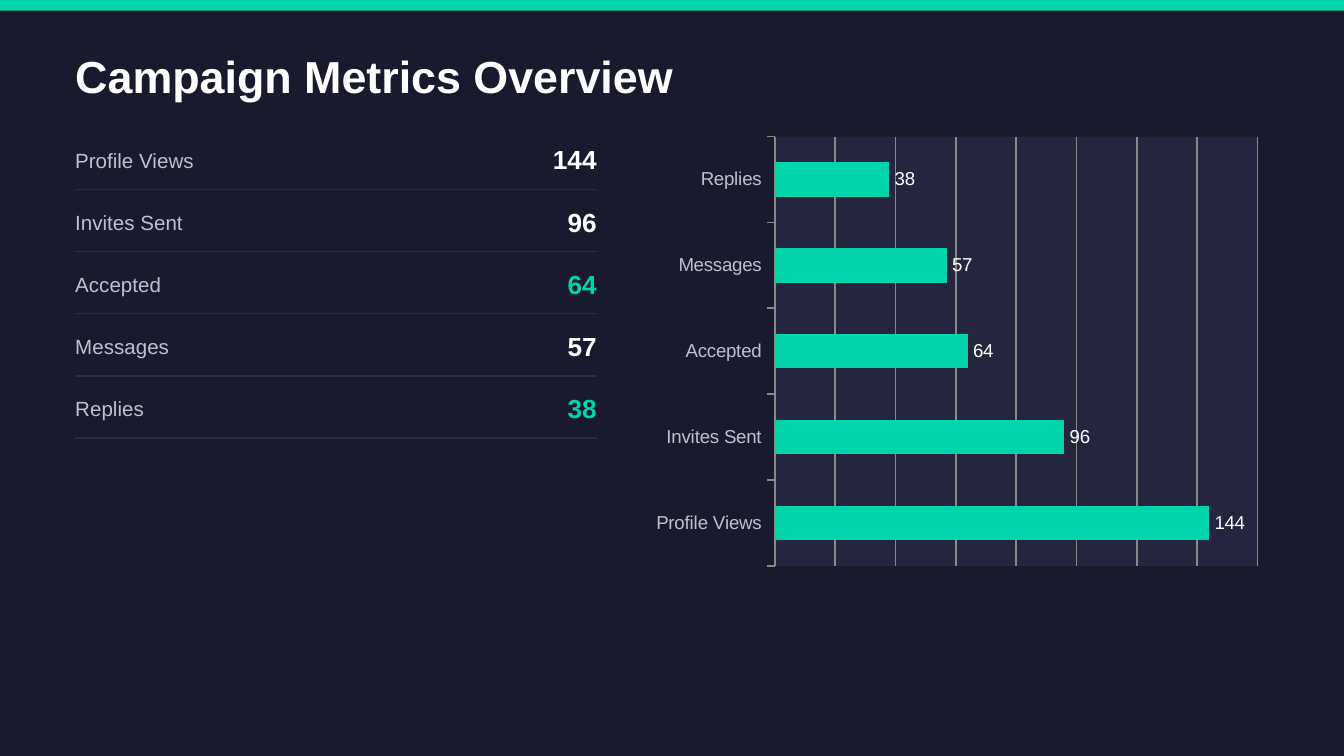
from lxml import etree
from pptx import Presentation
from pptx.chart.data import CategoryChartData
from pptx.dml.color import RGBColor
from pptx.enum import chart as ch, shapes, text
from pptx.oxml import parse_xml
from pptx.oxml.ns import nsdecls, qn
from pptx.util import Inches, Pt

TEAL, WHITE, GREY = "00D4AA", "FFFFFF", "C0C0D0"
LEFT, RIGHT = 0.56, 4.44
FIRST_DIVIDER, LAST_DIVIDER = 1.41, 3.26


def color(hex_value):
    return RGBColor.from_string(hex_value)


def write(shape, words, size, hex_value, bold=False, align=text.PP_ALIGN.LEFT):
    frame = shape.text_frame
    frame.text = words
    frame.margin_left = frame.margin_right = frame.margin_top = frame.margin_bottom = 0
    frame.auto_size = text.MSO_AUTO_SIZE.NONE
    frame.vertical_anchor = text.MSO_ANCHOR.TOP
    frame.word_wrap = True
    paragraph = frame.paragraphs[0]
    paragraph.alignment = align
    font = paragraph.runs[0].font
    font.name, font.size, font.bold = "Arial", Pt(size), bold
    font.color.rgb = color(hex_value)


# 16:9 slide
prs = Presentation()
prs.slide_width = Inches(10)
prs.slide_height = prs.slide_width * 9 // 16
slide = prs.slides.add_slide(prs.slide_layouts[5])
slide.background.fill.solid()
slide.background.fill.fore_color.rgb = color("1A1A2E")

# Top accent bar
accent = slide.shapes.add_shape(
    shapes.MSO_SHAPE.RECTANGLE, 0, 0, prs.slide_width, Inches(0.08))
accent.shadow.inherit = False
accent.fill.solid()
accent.fill.fore_color.rgb = color(TEAL)
accent.line.fill.background()

# Title
title = slide.shapes.title
title.left, title.top = Inches(LEFT), Inches(0.36)
title.width, title.height = Inches(9.07), Inches(0.39)
write(title, "Campaign Metrics Overview", 24, WHITE, bold=True)

# Metric rows: divider, label, value
metrics = [
    ("Profile Views", 144, WHITE, 0.9, 0.33),
    ("Invites Sent", 96, WHITE, 0.81, 0.22),
    ("Accepted", 64, TEAL, 0.65, 0.22),
    ("Messages", 57, WHITE, 0.71, 0.22),
    ("Replies", 38, TEAL, 0.52, 0.22),
]
row_pitch = (LAST_DIVIDER - FIRST_DIVIDER) / (len(metrics) - 1)
for row, (metric, count, count_color, label_width, value_width) in enumerate(metrics):
    divider_y = FIRST_DIVIDER + row * row_pitch
    divider = slide.shapes.add_connector(
        shapes.MSO_CONNECTOR.STRAIGHT,
        Inches(LEFT), Inches(divider_y), Inches(RIGHT), Inches(divider_y))
    divider.line.color.rgb = color("2A2A4E")
    divider.line.width = Pt(0.75)
    etree.SubElement(divider._element.spPr, qn("a:effectLst"))

    label = slide.shapes.add_textbox(
        Inches(LEFT), Inches(divider_y - 0.31), Inches(label_width), Inches(0.17))
    write(label, metric, 11, GREY)
    label.text_frame.word_wrap = False
    value = slide.shapes.add_textbox(
        Inches(RIGHT - value_width), Inches(divider_y - 0.34),
        Inches(value_width), Inches(0.23))
    write(value, str(count), 14, count_color, bold=True, align=text.PP_ALIGN.RIGHT)
    value.text_frame.word_wrap = False

# Bar chart of the same metrics
data = CategoryChartData()
data.categories = [metric[0] for metric in metrics]
data.add_series("Series 1", [metric[1] for metric in metrics])
chart = slide.shapes.add_chart(
    ch.XL_CHART_TYPE.BAR_CLUSTERED,
    Inches(4.79), Inches(0.95), Inches(4.66), Inches(3.33), data).chart
chart.has_legend = False
chart.has_title = False
chart.font.name, chart.font.size = "Calibri", Pt(10)
chart.font.color.rgb = color("000000")

bars = chart.plots[0]
bars.gap_width = 150
bars.vary_by_categories = False
bars.series[0].format.fill.solid()
bars.series[0].format.fill.fore_color.rgb = color(TEAL)
labels = bars.series[0].data_labels
labels.show_value = True
labels.number_format, labels.number_format_is_linked = "#,##0", False
labels.position = ch.XL_LABEL_POSITION.OUTSIDE_END

category_axis, value_axis = chart.category_axis, chart.value_axis
for font, font_color in ((labels.font, WHITE), (category_axis.tick_labels.font, GREY)):
    font.name, font.size = "Arial", Pt(10)
    font.color.rgb = color(font_color)

category_axis.major_tick_mark = ch.XL_TICK_MARK.OUTSIDE
value_axis.has_major_gridlines = True
value_axis.visible = False
for axis_line in (category_axis.format.line, value_axis.major_gridlines.format.line):
    axis_line.color.rgb = color("888888")
    axis_line.width = Pt(1)

# Plot area background
chart._chartSpace.chart.plotArea.append(parse_xml(
    f'<c:spPr {nsdecls("c", "a")}><a:solidFill><a:srgbClr val="252540"/>'
    '</a:solidFill></c:spPr>'))

prs.save("out.pptx")
